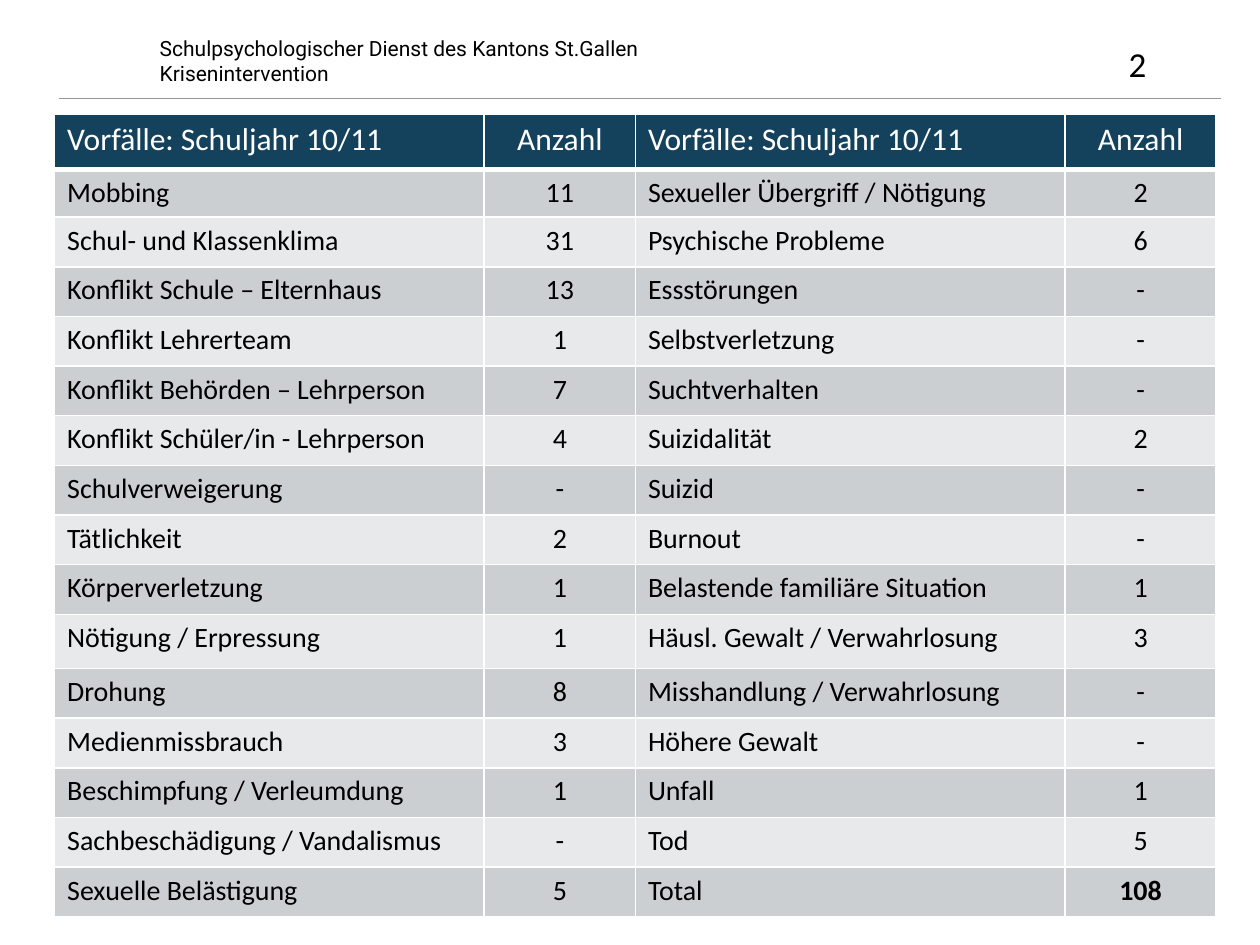
import pptx
import pptx.dml.color
import pptx.enum.shapes
import pptx.enum.text
import pptx.oxml
import pptx.oxml.ns
import pptx.util
from lxml import etree

Pt = pptx.util.Pt
COLORS = {
    "header": "14425D",
    "band_dark": "CCCFD2",
    "band_light": "E7E9EA",
    "white": "FFFFFF",
    "black": "000000",
    "rule": "111111",
}
HEADINGS = ("Vorfälle: Schuljahr 10/11", "Anzahl") * 2
INCIDENTS = [
    ("Mobbing", "11", "Sexueller Übergriff / Nötigung", "2"),
    ("Schul- und Klassenklima", "31", "Psychische Probleme", "6"),
    ("Konflikt Schule – Elternhaus", "13", "Essstörungen", "-"),
    ("Konflikt Lehrerteam", "1", "Selbstverletzung", "-"),
    ("Konflikt Behörden – Lehrperson", "7", "Suchtverhalten", "-"),
    ("Konflikt Schüler/in - Lehrperson", "4", "Suizidalität", "2"),
    ("Schulverweigerung", "-", "Suizid", "-"),
    ("Tätlichkeit", "2", "Burnout", "-"),
    ("Körperverletzung", "1", "Belastende familiäre Situation", "1"),
    ("Nötigung / Erpressung", "1", "Häusl. Gewalt / Verwahrlosung", "3"),
    ("Drohung", "8", "Misshandlung / Verwahrlosung", "-"),
    ("Medienmissbrauch", "3", "Höhere Gewalt", "-"),
    ("Beschimpfung / Verleumdung", "1", "Unfall", "1"),
    ("Sachbeschädigung / Vandalismus", "-", "Tod", "5"),
    ("Sexuelle Belästigung", "5", "Total", "108"),
]
COLUMN_WIDTHS = (245.5, 86.4) * 2
ROW_HEIGHT = 28.4
SPECIAL_HEIGHTS = {0: 31.2, 1: 27.4, 10: 30.9}


def rgb(name):
    return pptx.dml.color.RGBColor.from_string(COLORS[name])


def style_paragraph(para, size, font, color):
    para.font.size = Pt(size)
    para.font.name = font
    para.font.color.rgb = rgb(color)


def add_text(page, left, top, width, height, lines, size, font):
    box = page.shapes.add_textbox(Pt(left), Pt(top), Pt(width), Pt(height))
    frame = box.text_frame
    frame.word_wrap = True
    frame.text = "\n".join(lines)
    for para in frame.paragraphs:
        style_paragraph(para, size, font, "black")


def add_rule(page, left, right, y):
    rule = page.shapes.add_connector(
        pptx.enum.shapes.MSO_CONNECTOR.STRAIGHT, Pt(left), Pt(y), Pt(right), Pt(y))
    rule.line.width = Pt(0.25)
    rule.line.color.rgb = rgb("rule")
    properties = rule._element.spPr
    color = properties.find(".//" + pptx.oxml.ns.qn("a:srgbClr"))
    etree.SubElement(color, pptx.oxml.ns.qn("a:alpha"), val="68000")
    etree.SubElement(properties, pptx.oxml.ns.qn("a:effectLst"))


def set_borders(cell, bottom_width):
    properties = cell._tc.get_or_add_tcPr()
    widths = {"lnL": 1, "lnR": 1, "lnT": 1, "lnB": bottom_width}
    for index, (side, width) in enumerate(widths.items()):
        properties.insert(index, pptx.oxml.parse_xml(
            f'<a:{side} {pptx.oxml.ns.nsdecls("a")} w="{Pt(width)}"><a:solidFill>'
            f'<a:srgbClr val="{COLORS["white"]}"/></a:solidFill></a:{side}>'))


def fill_cell(cell, text, row, column):
    header = row == 0
    band = "band_dark" if row % 2 else "band_light"
    cell.fill.solid()
    cell.fill.fore_color.rgb = rgb("header" if header else band)
    set_borders(cell, 3 if header else 1)
    cell.text = text
    para = cell.text_frame.paragraphs[0]
    style_paragraph(para, 18 if header else 16, "Calibri", "white" if header else "black")
    para.font.bold = text == "108"
    if column % 2:
        para.alignment = pptx.enum.text.PP_ALIGN.CENTER


def add_incident_table(page, left, top):
    rows = [HEADINGS] + INCIDENTS
    heights = [SPECIAL_HEIGHTS.get(row, ROW_HEIGHT) for row in range(len(rows))]
    table = page.shapes.add_table(
        len(rows), len(HEADINGS), Pt(left), Pt(top),
        Pt(sum(COLUMN_WIDTHS)), Pt(sum(heights))).table
    for column, width in zip(table.columns, COLUMN_WIDTHS):
        column.width = Pt(width)
    for row, texts in enumerate(rows):
        table.rows[row].height = Pt(heights[row])
        for column, text in enumerate(texts):
            fill_cell(table.cell(row, column), text, row, column)


def main():
    deck = pptx.Presentation()
    deck.slide_width, deck.slide_height = Pt(720), Pt(540)
    page = deck.slides.add_slide(deck.slide_layouts[6])
    add_rule(page, 33.8, 697.7, 56.2)
    add_text(page, 84.2, 16.6, 615.6, 36,
             ["Schulpsychologischer Dienst des Kantons St.Gallen", "Krisenintervention"],
             12, "Roboto")
    add_text(page, 637.9, 20.9, 56.9, 31.7, ["2"], 20, "Calibri")
    add_incident_table(page, 31.2, 65.5)
    deck.save("out.pptx")


if __name__ == "__main__":
    main()
